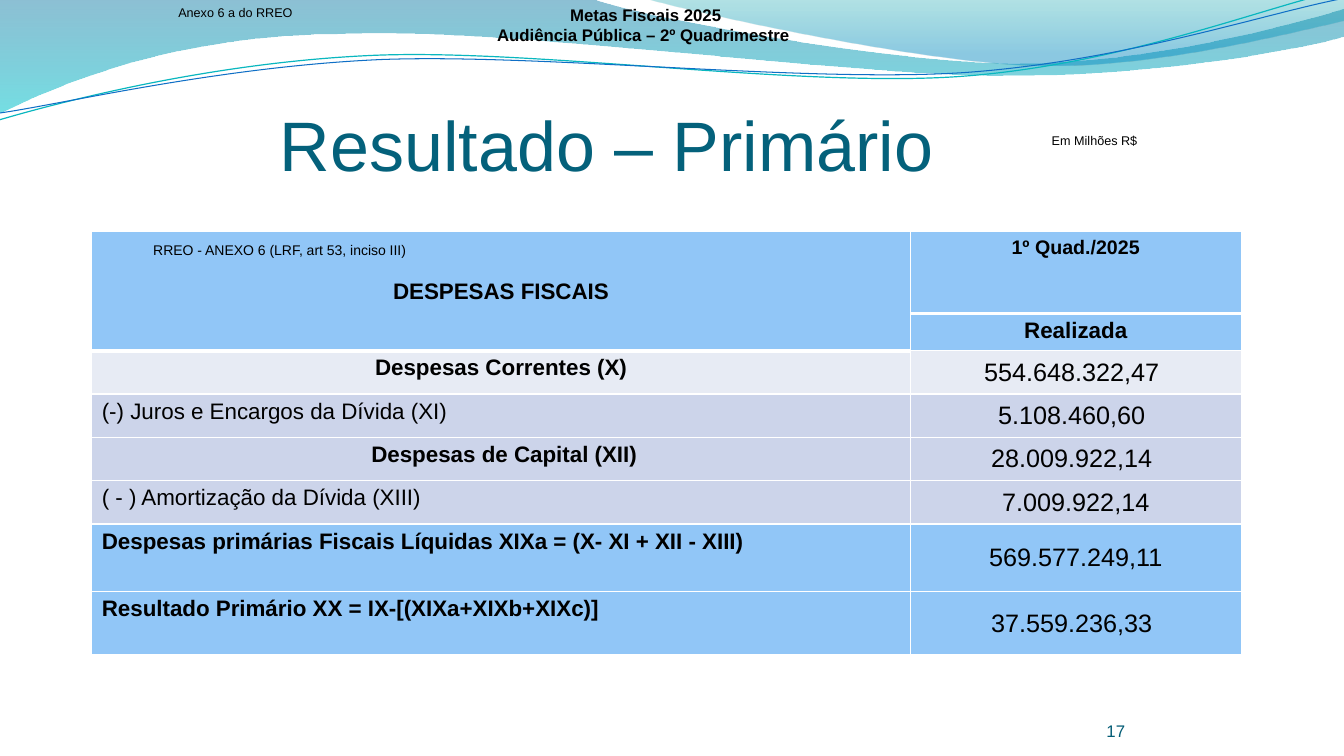
"""Build the fiscal targets slide with the primary result table."""
import math
from dataclasses import dataclass

import lxml.etree
import pptx
import pptx.dml.color
import pptx.enum.text
import pptx.oxml.ns
import pptx.util
from pptx.util import Inches, Pt

ALIGN = pptx.enum.text.PP_ALIGN
ANCHOR = pptx.enum.text.MSO_ANCHOR
FIT = pptx.enum.text.MSO_AUTO_SIZE
qn = pptx.oxml.ns.qn
HEADER, LIGHT, BAND = "91C6F7", "E7EBF4", "CCD4EA"
THIN, THICK = 0.96, 3
TILT, PIVOT = 357.3, (6.65, 0.58)


@dataclass
class Wave:
    start: tuple[float, float]
    segments: list[tuple[float, ...]]
    stops: tuple[tuple[float, str, int], ...] = ()
    angle: int = 0
    line: str = ""
    weight: float = 0


@dataclass
class Line:
    text: str
    size: float
    align: ALIGN = ALIGN.LEFT
    bold: bool = False
    color: str = "000000"
    before: float = 0


@dataclass
class Label:
    lines: list[Line]
    box: tuple[float, float, float, float]
    margins: tuple[float, float] = (0.1, 0.05)
    anchor: ANCHOR = ANCHOR.TOP
    fit: FIT = FIT.SHAPE_TO_FIT_TEXT
    wrap: bool = False


@dataclass
class Entry:
    name: str
    value: str
    height: float
    fill: str
    bold: bool = False
    align: ALIGN = ALIGN.LEFT
    right_margin: float = 0.09


WAVES = [
    Wave((0, -0.01), [(5.87, -0.01), (6.34, 0.17, 8.85, 0.63, 10.11, 0.63),
                      (11.37, 0.63, 12.78, 0.26, 13.33, 0.09), (13.35, 0.36),
                      (13.11, 0.44, 11.6, 0.76, 9.94, 0.75),
                      (8.29, 0.75, 5.09, 0.28, 3.43, 0.34),
                      (1.72, 0.35, 0.61, 0.83, -0.01, 1.13)],
         stops=((0, "0074A0", 45), (1, "00C4CD", 55)), angle=270),
    Wave((6.39, -0.01), [(6.79, 0.11, 9.09, 0.62, 10.25, 0.65),
                         (11.41, 0.69, 12.82, 0.32, 13.33, 0.21), (13.33, 0)],
         stops=((0.2, "008ABF", 45), (1, "00A0A8", 30)), angle=90),
    Wave((-0.01, 1.19), [(0.64, 1, 2.11, 0.62, 3.69, 0.55),
                         (5.27, 0.48, 7.89, 0.87, 9.5, 0.76),
                         (11.1, 0.65, 12.51, 0.08, 13.31, -0.1)],
         line="09B7BF", weight=0.85),
    Wave((0, 1.12), [(0.63, 1.03, 2.18, 0.66, 3.78, 0.59),
                     (5.37, 0.53, 7.96, 0.82, 9.55, 0.72),
                     (11.15, 0.61, 12.55, 0.13, 13.34, -0.02)],
         line="0F6FC6", weight=0.75),
]
ENTRIES = [
    Entry("Despesas Correntes (X)", "554.648.322,47", 0.43, LIGHT, True, ALIGN.CENTER),
    Entry("(-) Juros e Encargos da Dívida (XI)", "5.108.460,60", 0.43, BAND),
    Entry(" Despesas de Capital (XII)", "28.009.922,14", 0.43, BAND, True, ALIGN.CENTER),
    Entry("( - ) Amortização da Dívida (XIII)", "7.009.922,14", 0.43, BAND,
          right_margin=0.01),
    Entry("Despesas primárias Fiscais Líquidas XIXa = (X- XI + XII - XIII)",
          "569.577.249,11", 0.67, HEADER, True, right_margin=0.01),
    Entry("Resultado Primário XX = IX-[(XIXa+XIXb+XIXc)]", "37.559.236,33", 0.63,
          HEADER, True),
]
LABELS = [
    Label([Line("17", 12, ALIGN.RIGHT, color="035C75")], (10.33, 6.95, 0.83, 0.4),
          (0, 0), ANCHOR.BOTTOM, FIT.NONE, True),
    Label([Line("Em Milhões R$", 9, ALIGN.CENTER)], (10.33, 1.27, 1.05, 0.25)),
    Label([Line("Anexo 6 a do RREO", 9)], (1.67, 0, 1.35, 0.25)),
    Label([Line("Metas Fiscais 2025", 12, ALIGN.CENTER, True),
           Line("Audiência Pública – 2º Quadrimestre ", 12, ALIGN.CENTER, True)],
          (4.71, 0, 3.39, 0.5), anchor=ANCHOR.MIDDLE),
    Label([Line("Resultado – Primário", 50, ALIGN.CENTER, color="04617B"),
           Line("RREO - ANEXO 6 (LRF, art 53, inciso III)", 10, before=40)],
          (1.52, 0.28, 9, 1.25), (0, 0.73), fit=FIT.NONE, wrap=True),
]


def rgb(value: str) -> pptx.dml.color.RGBColor:
    """Turn a hex string into a colour."""
    return pptx.dml.color.RGBColor.from_string(value)


def write(frame: pptx.text.text.TextFrame, lines: list[Line]) -> None:
    """Fill a text frame with formatted paragraphs."""
    for index, line in enumerate(lines):
        paragraph = frame.add_paragraph() if index else frame.paragraphs[0]
        paragraph.alignment = line.align
        if line.before:
            paragraph.space_before = Pt(line.before)
        run = paragraph.add_run()
        run.text = line.text
        formats = {"name": "Arial", "size": Pt(line.size), "bold": line.bold}
        for key, value in formats.items():
            setattr(run.font, key, value)
        run.font.color.rgb = rgb(line.color)


def place(x: float, y: float, turn: float) -> tuple[int, int]:
    """Turn a point about the pivot and convert it to slide units."""
    angle = math.radians(turn)
    dx, dy = x - PIVOT[0], y - PIVOT[1]
    return (Inches(PIVOT[0] + dx * math.cos(angle) - dy * math.sin(angle)),
            Inches(PIVOT[1] + dx * math.sin(angle) + dy * math.cos(angle)))


def draw_wave(slide: pptx.slide.Slide, wave: Wave) -> None:
    """Draw a translucent gradient wave or a thin tilted curve."""
    turn = 360 - TILT if wave.line else 0
    pieces = [[place(x, y, turn) for x, y in zip(segment[::2], segment[1::2])]
              for segment in wave.segments]
    builder = slide.shapes.build_freeform(*place(*wave.start, turn))
    builder.add_line_segments([piece[-1] for piece in pieces], close=bool(wave.stops))
    shape = builder.convert_to_shape()
    shape.shadow.inherit = False
    for straight, piece in zip(list(shape.element.iter(qn("a:lnTo"))), pieces):
        if len(piece) == 3:
            curve = lxml.etree.Element(qn("a:cubicBezTo"))
            for x, y in piece:
                lxml.etree.SubElement(curve, qn("a:pt"), x=str(x - shape.left),
                                      y=str(y - shape.top))
            straight.getparent().replace(straight, curve)
    if wave.line:
        shape.rotation = TILT
        shape.fill.background()
        shape.line.color.rgb = rgb(wave.line)
        shape.line.width = Pt(wave.weight)
        return
    shape.line.fill.background()
    shape.fill.gradient()
    shape.fill.gradient_angle = wave.angle
    for stop, (position, color, _) in zip(shape.fill.gradient_stops, wave.stops):
        stop.position = position
        stop.color.rgb = rgb(color)
    tints = list(shape.element.spPr.iter(qn("a:srgbClr")))
    for tint, (_, _, opacity) in zip(tints, wave.stops):
        lxml.etree.SubElement(tint, qn("a:alpha"), val=str(opacity * 1000))


def draw_label(slide: pptx.slide.Slide, label: Label) -> None:
    """Place a text box."""
    frame = slide.shapes.add_textbox(*map(Inches, label.box)).text_frame
    side, top = map(Inches, label.margins)
    formats = {"word_wrap": label.wrap, "auto_size": label.fit,
               "vertical_anchor": label.anchor, "margin_left": side, "margin_right": side,
               "margin_top": top, "margin_bottom": Inches(0) if label.wrap else top}
    for key, value in formats.items():
        setattr(frame, key, value)
    write(frame, label.lines)


def style_cell(cell: pptx.table._Cell, fill: str, top: float = THIN,
               bottom: float = THIN) -> None:
    """Set the fill and white borders of a cell."""
    cell.fill.solid()
    cell.fill.fore_color.rgb = rgb(fill)
    edges = {"a:lnL": THIN, "a:lnR": THIN, "a:lnT": top, "a:lnB": bottom}
    for index, (tag, width) in enumerate(edges.items()):
        edge = lxml.etree.Element(qn(tag), w=str(Pt(width)))
        solid = lxml.etree.SubElement(edge, qn("a:solidFill"))
        lxml.etree.SubElement(solid, qn("a:srgbClr"), val="FFFFFF")
        cell._tc.get_or_add_tcPr().insert(index, edge)


def draw_table(slide: pptx.slide.Slide) -> None:
    """Build the table of fiscal expenses."""
    heights = [0.81, 0.37] + [entry.height for entry in ENTRIES]
    table = slide.shapes.add_table(len(heights), 2, Inches(0.91), Inches(2.3),
                                   Inches(11.4), Inches(sum(heights))).table
    table.first_row = table.horz_banding = False
    for column, width in zip(table.columns, (8.12, 3.28)):
        column.width = Inches(width)
    for row, height in zip(table.rows, heights):
        row.height = Inches(height)
    title, period, lower, kind = (table.cell(r, c) for r in (0, 1) for c in (0, 1))
    for cell in (title, period, lower):
        style_cell(cell, HEADER, bottom=THICK)
    style_cell(kind, HEADER, top=THICK)
    title.merge(lower)
    title.vertical_anchor = ANCHOR.MIDDLE
    for cell, text, size in ((title, "DESPESAS FISCAIS", 16), (period, "1º Quad./2025", 14),
                             (kind, "Realizada", 16)):
        write(cell.text_frame, [Line(text, size, ALIGN.CENTER, True)])
    for index, entry in enumerate(ENTRIES, 2):
        name, value = table.cell(index, 0), table.cell(index, 1)
        style_cell(name, entry.fill, top=THICK if index == 2 else THIN)
        style_cell(value, entry.fill)
        write(name.text_frame, [Line(entry.name, 16, entry.align, entry.bold)])
        write(value.text_frame, [Line(entry.value, 18, ALIGN.CENTER)])
        formats = {"vertical_anchor": ANCHOR.MIDDLE, "margin_left": Inches(0.01),
                   "margin_right": Inches(entry.right_margin)}
        for key, setting in formats.items():
            setattr(value, key, setting)


def main() -> None:
    """Assemble and save the slide."""
    deck = pptx.Presentation()
    deck.slide_width, deck.slide_height = Inches(13.33), Inches(7.5)
    slide = deck.slides.add_slide(deck.slide_layouts[6])
    for wave in WAVES:
        draw_wave(slide, wave)
    draw_table(slide)
    for label in LABELS:
        draw_label(slide, label)
    deck.save("out.pptx")


if __name__ == "__main__":
    main()
